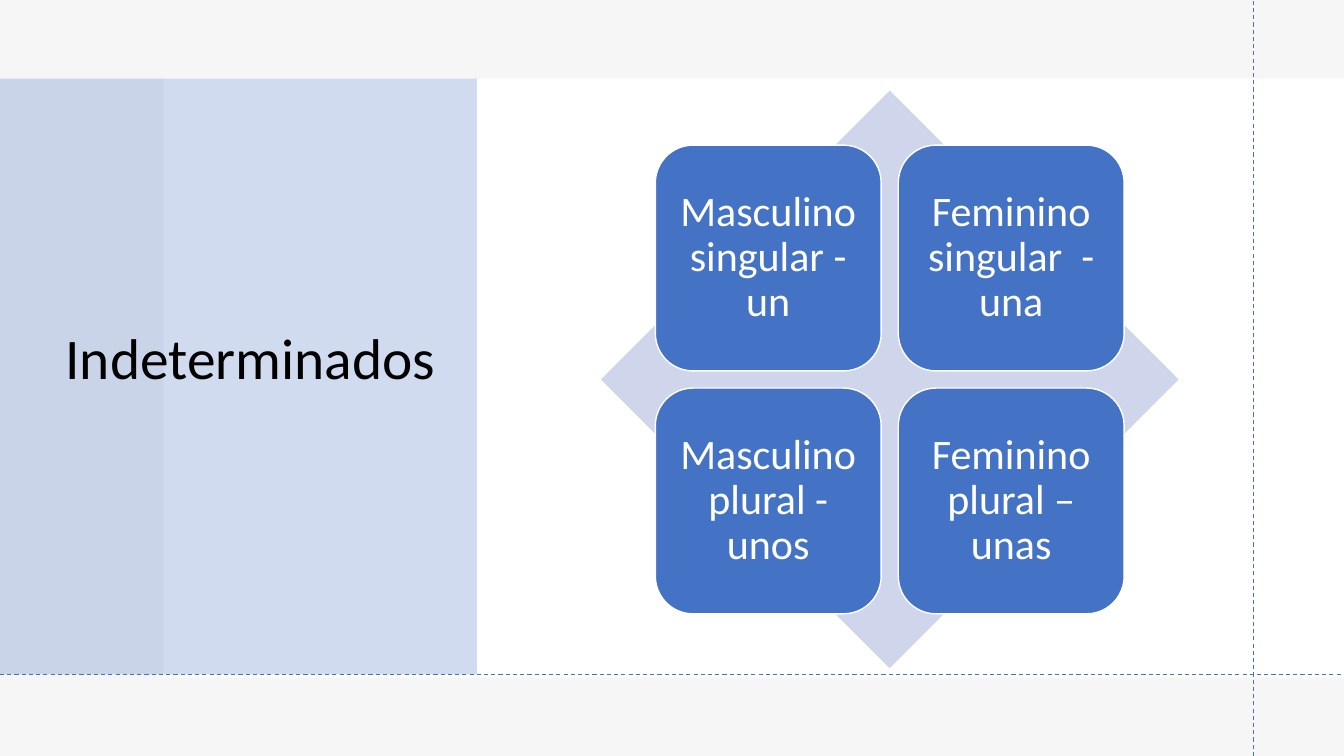
"""Build the slide on Spanish indefinite articles."""
from lxml import etree
from pptx import Presentation
from pptx.dml.color import RGBColor
from pptx.enum.dml import MSO_LINE
from pptx.enum.shapes import MSO_CONNECTOR, MSO_SHAPE
from pptx.enum.text import MSO_ANCHOR, PP_ALIGN
from pptx.oxml.ns import qn
from pptx.util import Inches, Pt

TITLE = "Indeterminados"
CARDS = [
    ["Masculino singular - un", "Feminino singular  - una"],
    ["Masculino plural - unos", "Feminino plural – unas"],
]
HUES = {"white": "FFFFFF", "gray": "E7E6E6", "blue": "4472C4",
        "pale": "CFD5EA", "black": "000000"}
FONT = "Calibri"
WIDE, HIGH = 13.33, 7.5
TOP, BASE = 0.78, 6.69
RULE = 12.43
BLOCKS = [
    (0, 0, WIDE, HIGH, "gray", 35),
    (1.62, TOP, WIDE - 1.62, 5.94, "white", 100),
    (0, TOP, 4.73, BASE - TOP, "blue", 25),
]
RULES = [(RULE, HIGH, RULE, 0), (0, BASE, WIDE, BASE)]
LEFT, HEAD, SPAN = 5.96, 0.9, 5.73
SIDE, STEP = 2.24, 2.41
EDGE = (SPAN - SIDE - STEP) / 2


def color(name):
    return RGBColor.from_string(HUES[name])


def add_box(shapes, kind, x, y, w, h, hue, alpha=100):
    box = shapes.add_shape(kind, *map(Inches, (x, y, w, h)))
    box.shadow.inherit = False
    box.fill.solid()
    box.fill.fore_color.rgb = color(hue)
    box.line.fill.background()
    if alpha < 100:
        tint = box.fill._xPr.find(".//" + qn("a:srgbClr"))
        etree.SubElement(tint, qn("a:alpha"), val=str(alpha * 1000))
    return box


def add_text(frame, text, size, hue, align):
    frame.word_wrap = True
    frame.vertical_anchor = MSO_ANCHOR.MIDDLE
    para = frame.paragraphs[0]
    para.alignment = align
    para.line_spacing = 0.9
    run = para.add_run()
    run.text = text
    run.font.name = FONT
    run.font.size = Pt(size)
    run.font.color.rgb = color(hue)


def add_rule(shapes, ends):
    rule = shapes.add_connector(MSO_CONNECTOR.STRAIGHT, *map(Inches, ends))
    rule.line.color.rgb = color("blue")
    rule.line.width = Pt(0.75)
    rule.line.dash_style = MSO_LINE.DASH
    etree.SubElement(rule._element.spPr, qn("a:effectLst"))


def add_card(shapes, row, col, text):
    x = LEFT + EDGE + col * STEP
    y = HEAD + EDGE + row * STEP
    card = add_box(shapes, MSO_SHAPE.ROUNDED_RECTANGLE, x, y, SIDE, SIDE, "blue")
    card.line.color.rgb = color("white")
    card.line.width = Pt(1)
    frame = card.text_frame
    frame.margin_left = frame.margin_right = Inches(0.12)
    frame.margin_top = frame.margin_bottom = Inches(0.12)
    add_text(frame, text, 30, "white", PP_ALIGN.CENTER)


def main():
    deck = Presentation()
    deck.slide_width, deck.slide_height = Inches(WIDE), Inches(HIGH)
    slide = deck.slides.add_slide(deck.slide_layouts[5])
    slide.background.fill.solid()
    slide.background.fill.fore_color.rgb = color("white")
    shapes = slide.shapes
    for block in BLOCKS:
        add_box(shapes, MSO_SHAPE.RECTANGLE, *block)

    title = shapes.title
    title.left, title.top = Inches(0.55), Inches(0.74)
    title.width, title.height = Inches(3.95), Inches(5.69)
    add_text(title.text_frame, TITLE, 41, "black", PP_ALIGN.LEFT)
    shapes._spTree.append(title._element)

    for ends in RULES:
        add_rule(shapes, ends)
    group = shapes.add_group_shape().shapes
    add_box(group, MSO_SHAPE.DIAMOND, LEFT, HEAD, SPAN, SPAN, "pale")
    for row, texts in enumerate(CARDS):
        for col, text in enumerate(texts):
            add_card(group, row, col, text)
    deck.save("out.pptx")


if __name__ == "__main__":
    main()
